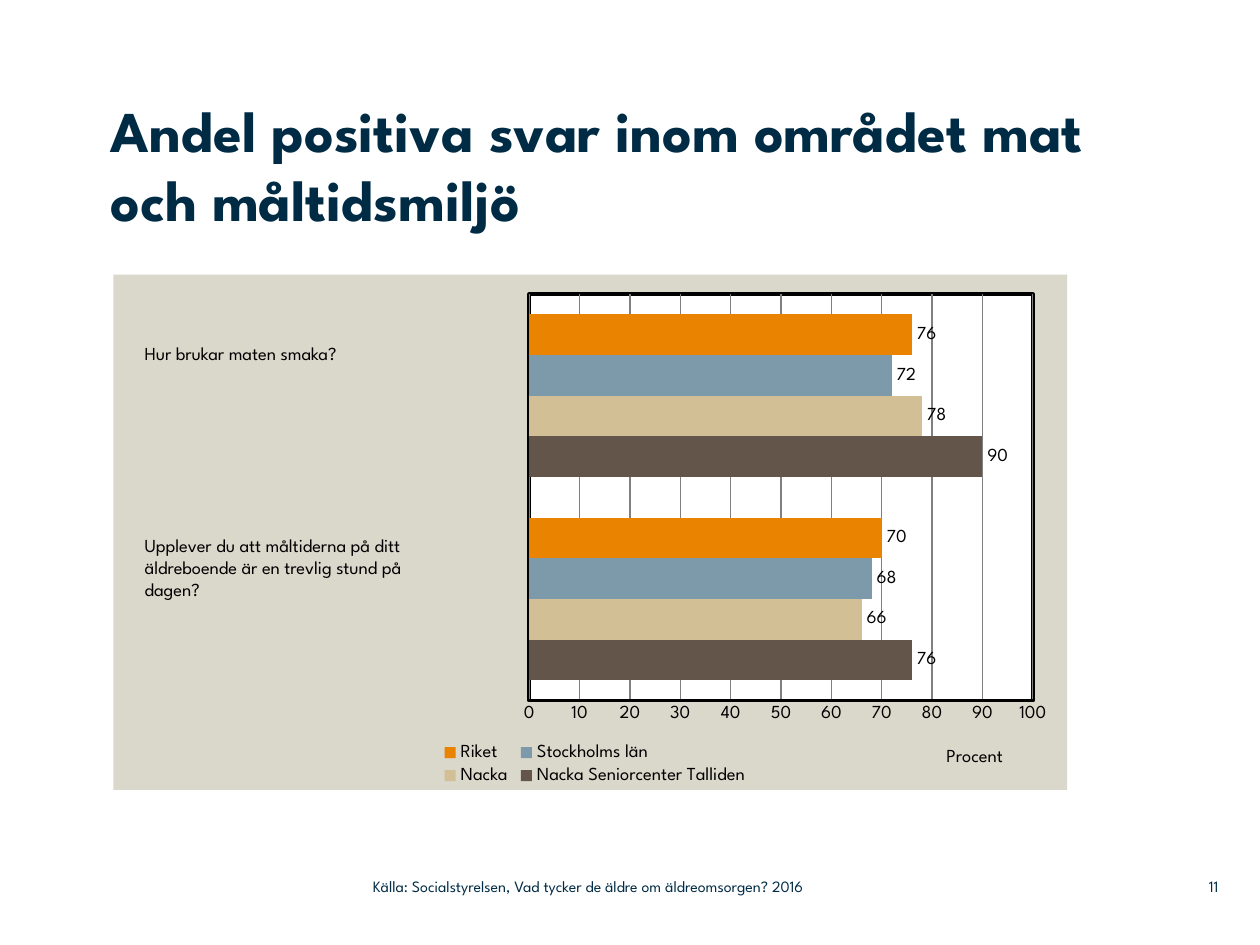
from lxml import etree
from pptx import Presentation
from pptx import util as u
from pptx.chart.data import CategoryChartData
from pptx.dml.color import RGBColor
from pptx.enum import chart as ch
from pptx.enum import text
from pptx.oxml import parse_xml
from pptx.oxml.ns import nsdecls, qn

FONT = "League Spartan"
COLORS = {"navy": "002B45", "black": "000000", "white": "FFFFFF", "panel": "DAD7CB", "grid": "808080"}
SERIES = [
    ("Nacka Seniorcenter Talliden", (76, 90), "635549"),
    ("Nacka", (66, 78), "D3BF96"),
    ("Stockholms län", (68, 72), "7D9AAA"),
    ("Riket", (70, 76), "E98300"),
]


def style_font(font, size, color, bold=False):
    """Set the typeface, size, colour and weight of a font."""
    font.name, font.size, font.bold = FONT, u.Pt(size), bold
    font.color.rgb = RGBColor.from_string(COLORS[color])


def add_text(s, box, *lines, size=10.5, color="black", bold=False, margins=(0, 0),
             anchor=text.MSO_ANCHOR.TOP, align=text.PP_ALIGN.LEFT):
    """Add a wrapped text box with one paragraph per line."""
    tf = s.shapes.add_textbox(*map(u.Inches, box)).text_frame
    tf.word_wrap, tf.vertical_anchor = True, anchor
    tf.margin_left = tf.margin_right = u.Inches(margins[0])
    tf.margin_top = tf.margin_bottom = u.Inches(margins[1])
    for i, line in enumerate(lines):
        p = tf.paragraphs[0] if i == 0 else tf.add_paragraph()
        p.alignment = align
        r = p.add_run()
        r.text = line
        style_font(r.font, size, color, bold)


def set_layout(parent, x, y, w=None, h=None, after=None, inner=False):
    """Place a chart part by fractions of the chart area."""
    for old in parent.findall(qn("c:layout")):
        parent.remove(old)
    layout = parse_xml(f"<c:layout {nsdecls('c')}><c:manualLayout/></c:layout>")
    manual = layout[0]
    values = [("layoutTarget", "inner" if inner else None), ("xMode", "edge"), ("yMode", "edge"),
              ("x", x), ("y", y), ("w", w), ("h", h)]
    for tag, value in values:
        if value is not None:
            etree.SubElement(manual, qn(f"c:{tag}")).set("val", str(value))
    if after:
        parent.find(qn(after)).addnext(layout)
    else:
        parent.insert(0, layout)


def area_format(fill, line="<a:noFill/>", width=0):
    """Return the fill and outline of a chart area."""
    return parse_xml(
        f"<c:spPr {nsdecls('c', 'a')}><a:solidFill><a:srgbClr val='{fill}'/></a:solidFill>"
        f"<a:ln w='{u.Pt(width)}'>{line}</a:ln></c:spPr>")


def format_value_axis(axis):
    """Format the percent axis, its gridlines and its title."""
    axis.minimum_scale, axis.maximum_scale, axis.major_unit = 0, 100, 10
    axis.major_tick_mark = axis.minor_tick_mark = ch.XL_TICK_MARK.NONE
    axis.format.line.width = u.Pt(2)
    axis.format.line.color.rgb = RGBColor.from_string(COLORS["black"])
    grid = axis.major_gridlines.format.line
    grid.width = u.Pt(0.75)
    grid.color.rgb = RGBColor.from_string(COLORS["grid"])
    style_font(axis.tick_labels.font, 10.5, "black")
    title = axis.axis_title
    r = title.text_frame.paragraphs[0].add_run()
    r.text = "Procent"
    style_font(r.font, 10.5, "black")
    set_layout(title._element, 0.87, 0.91, after="c:tx")


def add_answer_chart(s):
    """Add the clustered bars of positive answers."""
    data = CategoryChartData()
    data.categories = ["1", "2"]
    for name, values, _ in SERIES:
        data.add_series(name, values)
    box = map(u.Inches, (0.9, 2.18, 7.57, 4.09))
    chart = s.shapes.add_chart(ch.XL_CHART_TYPE.BAR_CLUSTERED, *box, data).chart
    chart.has_title = False
    style_font(chart.font, 10.5, "black")
    plot = chart.plots[0]
    plot.gap_width, plot.overlap, plot.vary_by_categories = 100, 0, False
    for series, (_, _, color) in zip(plot.series, SERIES):
        series.format.fill.solid()
        series.format.fill.fore_color.rgb = RGBColor.from_string(color)
        labels = series.data_labels
        labels.show_value, labels.position = True, ch.XL_LABEL_POSITION.OUTSIDE_END
        style_font(labels.font, 10.5, "black")
    chart.category_axis.visible = False
    format_value_axis(chart.value_axis)

    chart.has_legend = True
    legend = chart.legend
    legend.position, legend.include_in_layout = ch.XL_LEGEND_POSITION.BOTTOM, False
    style_font(legend.font, 10.5, "black")
    set_layout(legend._element, 0.34, 0.9, 0.33, 0.1, after="c:legendPos")

    space = chart._chartSpace
    plot_area = space.chart.plotArea
    set_layout(plot_area, 0.436, 0.038, 0.528, 0.789, inner=True)
    border = f"<a:solidFill><a:srgbClr val='{COLORS['black']}'/></a:solidFill>"
    plot_area.append(area_format(COLORS["white"], border, 2))
    space.chart.addnext(area_format(COLORS["panel"]))


def main():
    """Build the slide and save it."""
    prs = Presentation()
    prs.slide_width, prs.slide_height = u.Inches(10), u.Inches(7.5)
    s = prs.slides.add_slide(prs.slide_layouts[6])
    add_answer_chart(s)
    add_text(s, (0.88, 0.75, 8.42, 1.42), "Andel positiva svar inom området mat och måltidsmiljö",
             size=33, color="navy", bold=True)
    add_text(s, (1.05, 2.67, 2.97, 0.28), "Hur brukar maten smaka?", margins=(0.1, 0.05))
    add_text(s, (1.05, 4.19, 2.93, 0.63),
             "Upplever du att måltiderna på ditt äldreboende är en trevlig stund på", "dagen?",
             margins=(0.1, 0.05))
    footer = {"size": 9, "color": "navy", "anchor": text.MSO_ANCHOR.MIDDLE}
    add_text(s, (9.2, 6.89, 0.47, 0.29), "11", align=text.PP_ALIGN.RIGHT, **footer)
    add_text(s, (2.96, 6.89, 4.43, 0.29),
             "Källa: Socialstyrelsen, Vad tycker de äldre om äldreomsorgen? 2016", **footer)
    prs.save("out.pptx")


if __name__ == "__main__":
    main()
